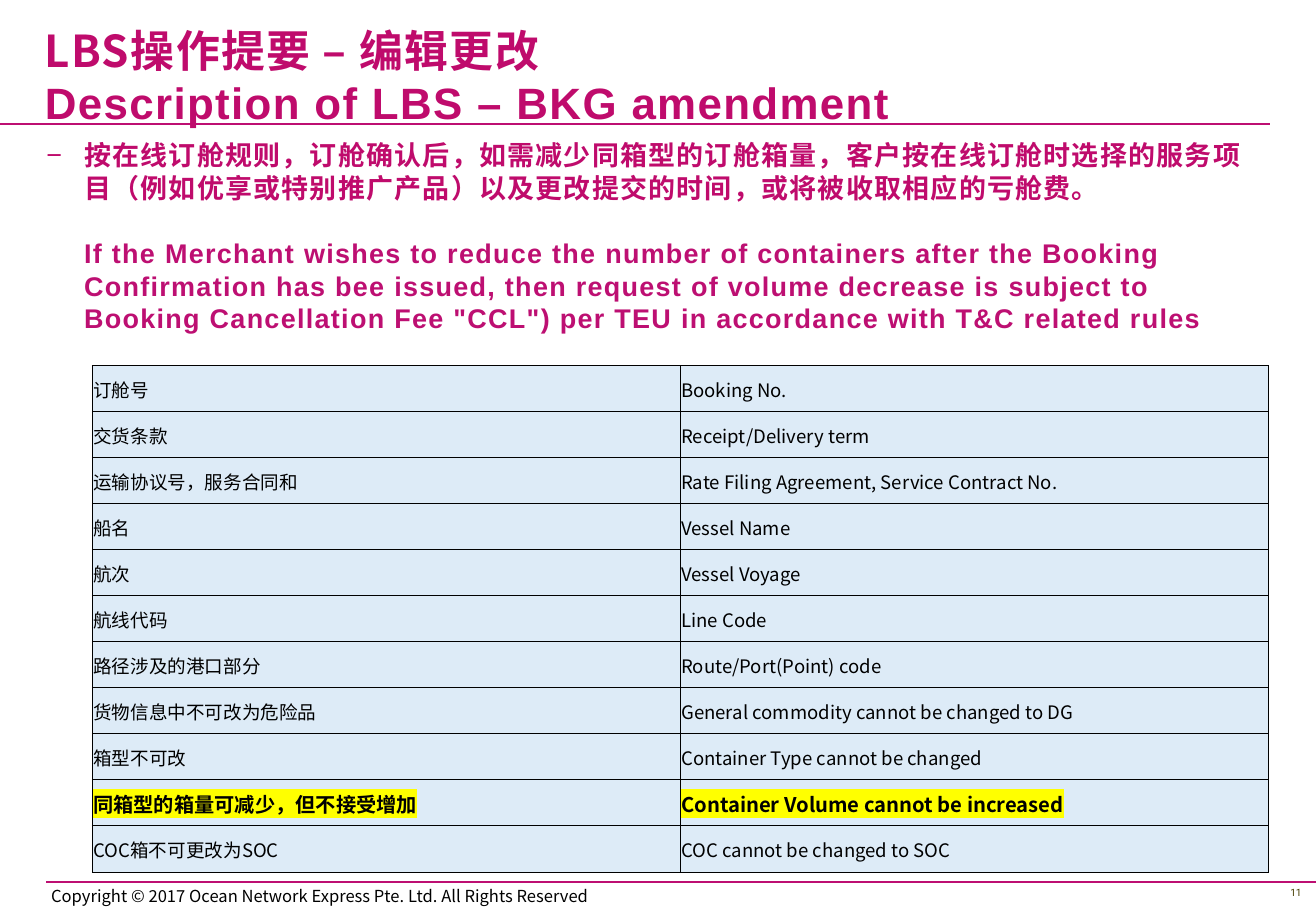
from dataclasses import dataclass
from lxml import etree
from pptx import Presentation
from pptx.dml.color import RGBColor
from pptx.enum import shapes, text
from pptx.oxml import ns
from pptx.util import Cm, Pt

COLORS = {"magenta": "BD0F72", "title": "BF0B6C", "black": "000000",
          "cell": "DDEBF7", "mark": "FFFF00", "number": "463D00"}
CJK = "Noto Sans CJK SC"


@dataclass
class Style:
    size: float
    font: str = CJK
    color: str = "black"
    bold: bool = False
    spacing: int = 0
    highlight: str = ""


@dataclass
class Box:
    x: float
    y: float
    w: float
    h: float
    lines: list[tuple[str, Style]]
    margins: tuple[float, float, float, float] = (0, 0.13, 0.25, 0.13)
    anchor: text.MSO_ANCHOR = text.MSO_ANCHOR.MIDDLE


@dataclass
class Rule:
    x1: float
    x2: float
    y: float


def rgb(name: str) -> RGBColor:
    return RGBColor.from_string(COLORS[name])


def add_xml(parent, tag: str, **attrs):
    return etree.SubElement(parent, ns.qn(tag), attrs)


def format_runs(p, style: Style) -> None:
    for r in p.runs:
        r.font.size, r.font.bold = Pt(style.size), style.bold
        r.font.color.rgb = rgb(style.color)
        rPr = r.font._element
        if style.spacing:
            rPr.set("spc", str(style.spacing))
        if style.highlight:
            mark = add_xml(rPr, "a:highlight")
            add_xml(mark, "a:srgbClr", val=COLORS[style.highlight])
        r.font.name = style.font
        add_xml(rPr, "a:ea", typeface=CJK)


def add_box(s, box: Box):
    sp = s.shapes.add_textbox(Cm(box.x), Cm(box.y), Cm(box.w), Cm(box.h))
    tf = sp.text_frame
    tf.word_wrap, tf.vertical_anchor = True, box.anchor
    (tf.margin_left, tf.margin_top,
     tf.margin_right, tf.margin_bottom) = map(Cm, box.margins)
    for i, (line, style) in enumerate(box.lines):
        p = tf.add_paragraph() if i else tf.paragraphs[0]
        p.text = line
        format_runs(p, style)
    return tf


def add_rule(s, rule: Rule) -> None:
    line = s.shapes.add_connector(shapes.MSO_CONNECTOR.STRAIGHT, Cm(rule.x1),
                                  Cm(rule.y), Cm(rule.x2), Cm(rule.y))
    line.line.color.rgb, line.line.width = rgb("magenta"), Pt(1)
    add_xml(line._element.spPr, "a:effectLst")


def fill_cell(cell, label: str, style: Style) -> None:
    cell.margin_left = cell.margin_right = cell.margin_top = Cm(0.02)
    cell.margin_bottom = 0
    cell.vertical_anchor = text.MSO_ANCHOR.MIDDLE
    cell.fill.solid()
    cell.fill.fore_color.rgb = rgb("cell")
    cell.text_frame.text = label
    format_runs(cell.text_frame.paragraphs[0], style)
    tcPr = cell._tc.get_or_add_tcPr()
    for i, side in enumerate("LRTB"):
        border = add_xml(tcPr, f"a:ln{side}", w=str(Pt(0.5)))
        add_xml(add_xml(border, "a:solidFill"), "a:srgbClr", val=COLORS["black"])
        tcPr.insert(i, border)


PLAIN = Style(11)
MARKED = Style(12, bold=True, highlight="mark")
ROWS = [
    ("订舱号", "Booking No.", PLAIN),
    ("交货条款", "Receipt/Delivery term", PLAIN),
    ("运输协议号，服务合同和", "Rate Filing Agreement, Service Contract No.", PLAIN),
    ("船名", "Vessel Name", PLAIN),
    ("航次", "Vessel Voyage", PLAIN),
    ("航线代码", "Line Code", PLAIN),
    ("路径涉及的港口部分", "Route/Port(Point) code", PLAIN),
    ("货物信息中不可改为危险品", "General commodity cannot be changed to DG", PLAIN),
    ("箱型不可改", "Container Type cannot be changed", PLAIN),
    ("同箱型的箱量可减少，但不接受增加", "Container Volume cannot be increased", MARKED),
    ("COC箱不可更改为SOC", "COC cannot be changed to SOC", PLAIN),
]
TITLE = Box(0.94, 0.42, 25.58, 2.34, [
    ("LBS操作提要 – 编辑更改", Style(26, CJK, "title", True, 80)),
    ("Description of LBS – BKG amendment", Style(26, "Arial", "title", True, 80)),
])
BODY = Box(0.97, 2.77, 25.58, 3.28, [
    ("按在线订舱规则，订舱确认后，如需减少同箱型的订舱箱量，客户按在线订舱时选择的服务项目"
     "（例如优享或特别推广产品）以及更改提交的时间，或将被收取相应的亏舱费。",
     Style(16, CJK, "title", True, 80)),
    ("If the Merchant wishes to reduce the number of containers after the Booking "
     "Confirmation has bee issued, then request of volume decrease is subject to "
     'Booking Cancellation Fee "CCL") per TEU in accordance with T&C related rules',
     Style(16, "Arial", "magenta", True, 80)),
], anchor=text.MSO_ANCHOR.TOP)
COPYRIGHT = Box(0.97, 18.49, 12.29, 0.51, [
    ("Copyright © 2017 Ocean Network Express Pte. Ltd. All Rights Reserved",
     Style(9.8, "Noto Sans CJK JP")),
], margins=(0.1, 0, 0, 0))
NUMBER = Box(21.03, 18.31, 6.43, 0.71, [("11", Style(6, "Roboto", "number"))],
             margins=(0.25, 0.13, 0.25, 0.13))


def main() -> None:
    prs = Presentation()
    prs.slide_width, prs.slide_height = Cm(27.51), Cm(19.05)
    s = prs.slides.add_slide(prs.slide_layouts[6])

    # Rules and footer
    for rule in (Rule(0.97, 27.51, 18.44), Rule(0, 26.54, 2.59)):
        add_rule(s, rule)
    add_box(s, COPYRIGHT).paragraphs[0].line_spacing = 0.95
    add_box(s, NUMBER).paragraphs[0].alignment = text.PP_ALIGN.RIGHT

    # Amendment table
    table = s.shapes.add_table(len(ROWS), 2, Cm(1.93), Cm(7.65),
                               Cm(24.58), Cm(10.59)).table
    for row, (chinese, english, style) in zip(table.rows, ROWS):
        for cell, label in zip(row.cells, (chinese, english)):
            fill_cell(cell, label, style)

    # Title and body with a dash on the first paragraph
    add_box(s, TITLE)
    rule_text, fee_text = add_box(s, BODY).paragraphs
    for p in (rule_text, fee_text):
        p.line_spacing = Pt(19.3)
        p._p.get_or_add_pPr().set("marL", str(Cm(0.79)))
    pPr = rule_text._p.get_or_add_pPr()
    pPr.set("indent", str(Cm(-0.79)))
    add_xml(pPr, "a:buFont", typeface="Arial")
    add_xml(pPr, "a:buChar", char="−")
    fee_text.space_before = Pt(19.3)

    prs.save("out.pptx")


if __name__ == "__main__":
    main()
